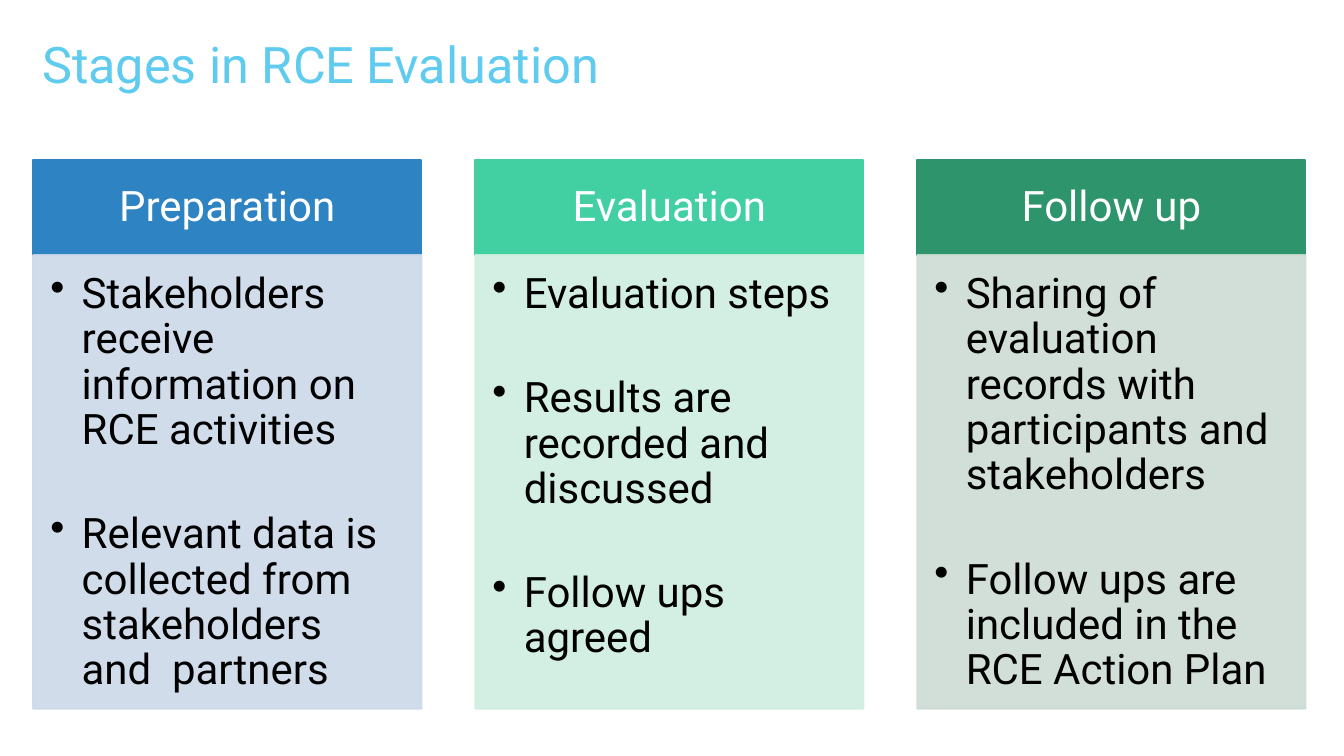
from lxml import etree
from pptx import Presentation
from pptx.dml.color import RGBColor
from pptx.enum.shapes import MSO_SHAPE
from pptx.enum.text import MSO_ANCHOR, MSO_AUTO_SIZE, PP_ALIGN
from pptx.oxml.ns import qn
from pptx.util import Cm, Pt

RECT = MSO_SHAPE.RECTANGLE
TOP, MIDDLE = MSO_ANCHOR.TOP, MSO_ANCHOR.MIDDLE
LEFT, CENTER = PP_ALIGN.LEFT, PP_ALIGN.CENTER
FONT = "Roboto"
SKY = RGBColor(0x5F, 0xCB, 0xEF)
WHITE = RGBColor(0xFF, 0xFF, 0xFF)
BLACK = RGBColor(0x00, 0x00, 0x00)
BLUE = RGBColor(0x2E, 0x83, 0xC3)
PALE_BLUE = RGBColor(0xCD, 0xD9, 0xE9)
MINT = RGBColor(0x42, 0xD0, 0xA2)
PALE_MINT = RGBColor(0xCF, 0xEE, 0xE0)
GREEN = RGBColor(0x2E, 0x94, 0x6B)
PALE_GREEN = RGBColor(0xCD, 0xDC, 0xD4)

STAGES = [
    ("Preparation", BLUE, PALE_BLUE, [
        "Stakeholders receive information on RCE activities",
        "Relevant data is collected from stakeholders and  partners"]),
    ("Evaluation", MINT, PALE_MINT, [
        "Evaluation steps",
        "Results are recorded and discussed",
        "Follow ups agreed"]),
    ("Follow up", GREEN, PALE_GREEN, [
        "Sharing of evaluation records with participants and stakeholders",
        "Follow ups are included in the RCE Action Plan"]),
]
X, STEP, WIDTH = 0.84, 11.14, 9.78


def add_box(x, y, height, color, anchor, insets):
    box = slide.shapes.add_shape(RECT, Cm(x), Cm(y), Cm(WIDTH), Cm(height))
    box.shadow.inherit = False
    box.fill.solid()
    box.fill.fore_color.rgb = color
    box.line.color.rgb = color
    box.line.width = Pt(1.5)
    frame = box.text_frame
    frame.word_wrap = True
    frame.vertical_anchor = anchor
    (frame.margin_left, frame.margin_top,
     frame.margin_right, frame.margin_bottom) = [Cm(i) for i in insets]
    return box


def style(par, size, color, align):
    par.alignment = align
    par.font.name = FONT
    par.font.size = Pt(size)
    par.font.color.rgb = color
    par.line_spacing = 0.9


prs = Presentation()
prs.slide_width, prs.slide_height = Cm(33.87), Cm(19.05)
slide = prs.slides.add_slide(prs.slide_layouts[5])

# Title
title = slide.shapes.title
title.left, title.top, title.width, title.height = Cm(0.81), Cm(0.71), Cm(23.88), Cm(3.66)
frame = title.text_frame
frame.text = "Stages in RCE Evaluation"
frame.vertical_anchor = TOP
frame.auto_size = MSO_AUTO_SIZE.NONE
style(frame.paragraphs[0], 36, SKY, LEFT)
frame.paragraphs[0].line_spacing = 1.0

# Stage columns
for col, (name, dark, pale, points) in enumerate(STAGES):
    x = X + col * STEP

    # Heading
    head = add_box(x, 4.03, 2.4, dark, MIDDLE, (0.58, 0.33, 0.58, 0.33))
    head.text_frame.text = name
    style(head.text_frame.paragraphs[0], 30, WHITE, CENTER)

    # Body with slightly transparent fill and line
    body = add_box(x, 6.43, 11.43, pale, TOP, (0.43, 0.43, 0.58, 0.66))
    for tint in body._element.spPr.iter(qn("a:srgbClr")):
        etree.SubElement(tint, qn("a:alpha"), val="90000")

    # Bullets
    frame = body.text_frame
    frame.text = "\n".join(points)
    for par in frame.paragraphs:
        style(par, 30, BLACK, LEFT)
        if par.text != points[-1]:
            par.space_after = Pt(42)
        props = par._p.get_or_add_pPr()
        props.set("marL", str(Cm(0.79)))
        props.set("indent", str(-Cm(0.79)))
        etree.SubElement(props, qn("a:buChar"), char="•")

prs.save("out.pptx")
